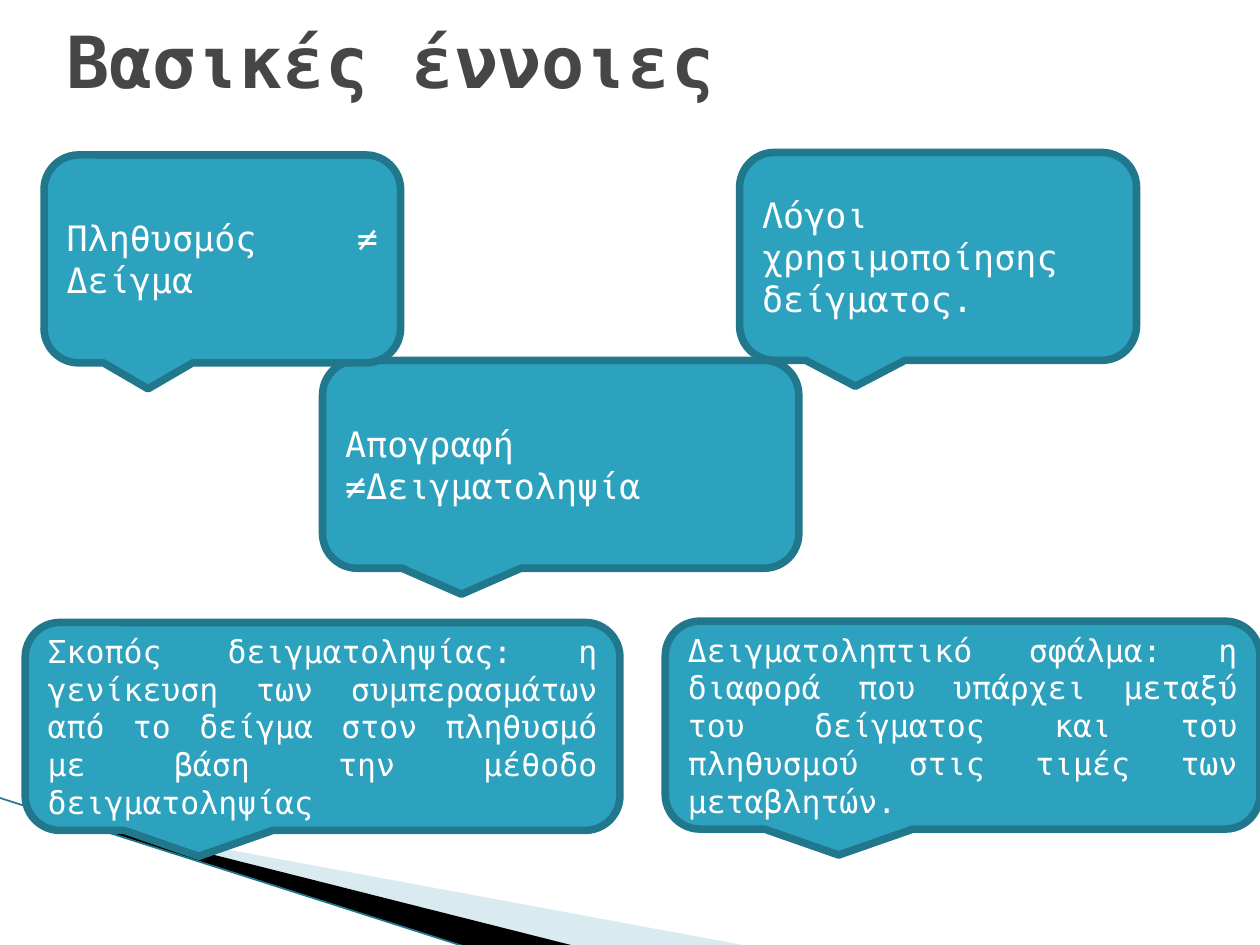
from dataclasses import dataclass

from lxml.etree import SubElement
from pptx import Presentation
from pptx.dml.color import RGBColor
from pptx.enum.shapes import MSO_CONNECTOR, MSO_SHAPE
from pptx.enum.text import MSO_ANCHOR, PP_ALIGN
from pptx.oxml.ns import qn
from pptx.slide import Slide
from pptx.text.text import TextFrame
from pptx.util import Inches, Pt


@dataclass(frozen=True)
class Theme:
    face: str = "DejaVu Sans Mono"
    ink: str = "464646"
    white: str = "FFFFFF"
    teal: str = "2DA2BF"
    edge: str = "21788D"
    pale: str = "A0CBDC"
    black: str = "000000"
    head: float = 41
    large: float = 20
    small: float = 18
    border: float = 4.33
    thin: float = 0.95


@dataclass(frozen=True)
class Wedge:
    points: tuple[tuple[float, float], ...]
    color: str
    alpha: int = 100


@dataclass(frozen=True)
class Callout:
    left: float
    top: float
    width: float
    text: str
    size: float


THEME = Theme()
HEIGHT = 1.65

WEDGES = (
    Wedge(((0.55, 6.51), (5.95, 7.51), (4.56, 7.51), (0.55, 6.5)), THEME.pale, 40),
    Wedge(((0.53, 6.49), (4.57, 7.51), (3.72, 7.52), (0.54, 6.5)), THEME.black),
)

CALLOUTS = (
    Callout(5.87, 1.21, 3.15, "Λόγοι χρησιμοποίησης δείγματος.", THEME.large),
    Callout(2.56, 2.86, 3.78, "Απογραφή ≠Δειγματοληψία", THEME.large),
    Callout(
        0.2, 4.94, 4.72,
        "Σκοπός δειγματοληψίας: η γενίκευση των συμπερασμάτων από το δείγμα "
        "στον πληθυσμό με βάση την μέθοδο δειγματοληψίας",
        THEME.small,
    ),
    Callout(0.35, 1.23, 2.83, "Πληθυσμός ≠ Δείγμα", THEME.large),
    Callout(
        5.28, 4.93, 4.72,
        "Δειγματοληπτικό σφάλμα: η διαφορά που υπάρχει μεταξύ του δείγματος "
        "και του πληθυσμού στις τιμές των μεταβλητών.",
        THEME.small,
    ),
)


def paint(fill, color: str) -> None:
    fill.solid()
    fill.fore_color.rgb = RGBColor.from_string(color)


def write(frame: TextFrame, text: str, align: PP_ALIGN, color: str, style: dict) -> None:
    frame.word_wrap = True
    frame.vertical_anchor = MSO_ANCHOR.MIDDLE
    line = frame.paragraphs[0]
    line.alignment = align
    run = line.add_run()
    run.text = text
    for name, value in ({"name": THEME.face} | style).items():
        setattr(run.font, name, value)
    run.font.color.rgb = RGBColor.from_string(color)


def draw_wedge(slide: Slide, wedge: Wedge) -> None:
    first, *rest = [(Inches(x), Inches(y)) for x, y in wedge.points]
    pen = slide.shapes.build_freeform(*first)
    pen.add_line_segments(rest, close=True)
    shape = pen.convert_to_shape()
    shape.shadow.inherit = False
    paint(shape.fill, wedge.color)
    shape.line.fill.background()
    if wedge.alpha < 100:
        tint = shape.fill._xPr.find(qn("a:solidFill"))[0]
        SubElement(tint, qn("a:alpha"), val=str(wedge.alpha * 1000))


def draw_line(slide: Slide) -> None:
    ends = [Inches(n) for n in (-0.01, 6.33, 3.71, 7.52)]
    line = slide.shapes.add_connector(MSO_CONNECTOR.STRAIGHT, *ends)
    paint(line.line.fill, THEME.edge)
    line.line.width = Pt(THEME.thin)
    SubElement(line._element.spPr, qn("a:effectLst"))


def draw_title(slide: Slide) -> None:
    box = slide.shapes.add_textbox(Inches(0.43), Inches(0.05), Inches(9), Inches(0.85))
    style = {"size": Pt(THEME.head), "bold": True}
    write(box.text_frame, "Βασικές έννοιες", PP_ALIGN.LEFT, THEME.ink, style)


def draw_callout(slide: Slide, call: Callout) -> None:
    area = [Inches(n) for n in (call.left, call.top, call.width, HEIGHT)]
    shape = slide.shapes.add_shape(MSO_SHAPE.ROUNDED_RECTANGULAR_CALLOUT, *area)
    shape.shadow.inherit = False
    paint(shape.fill, THEME.teal)
    paint(shape.line.fill, THEME.edge)
    shape.line.width = Pt(THEME.border)
    style = {"size": Pt(call.size)}
    write(shape.text_frame, call.text, PP_ALIGN.JUSTIFY, THEME.white, style)


def main() -> None:
    deck = Presentation()
    deck.slide_width, deck.slide_height = Inches(10), Inches(7.5)
    slide = deck.slides.add_slide(deck.slide_layouts[6])
    for wedge in WEDGES:
        draw_wedge(slide, wedge)
    draw_line(slide)
    draw_title(slide)
    for call in CALLOUTS:
        draw_callout(slide, call)
    deck.save("out.pptx")


if __name__ == "__main__":
    main()
